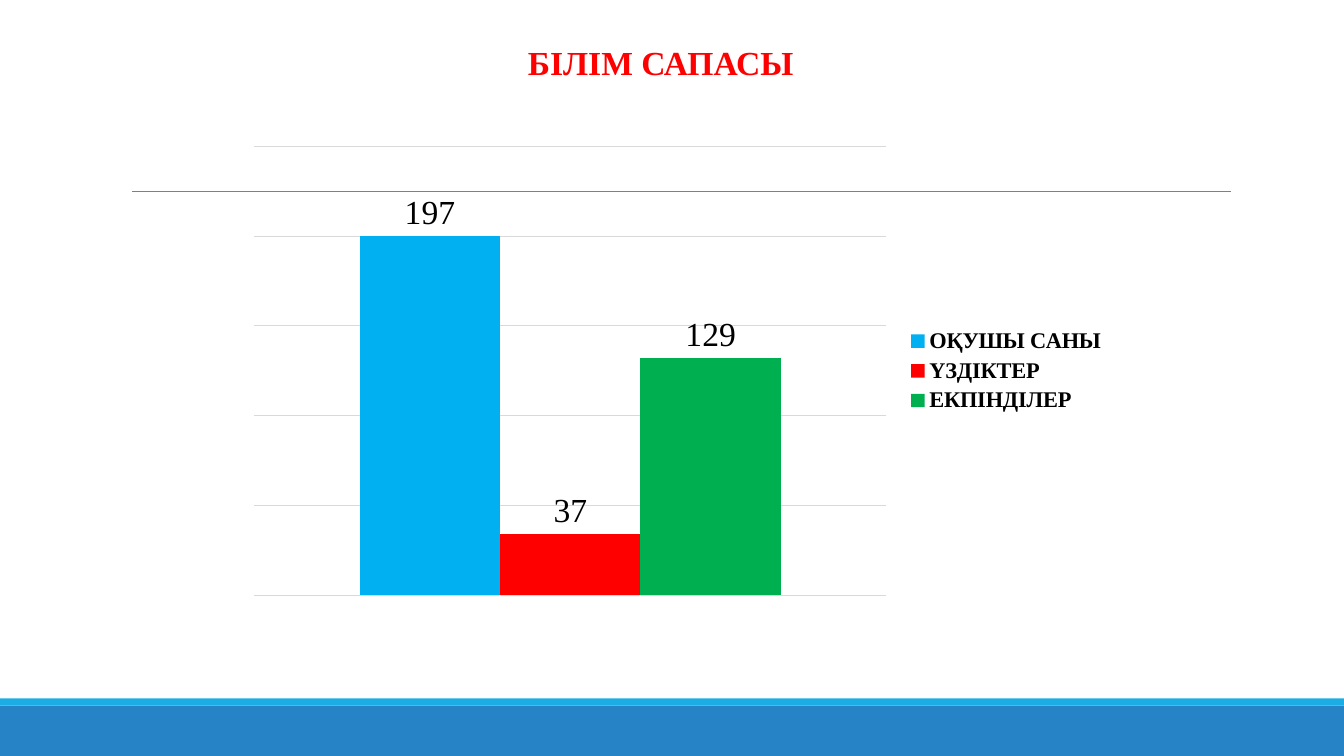
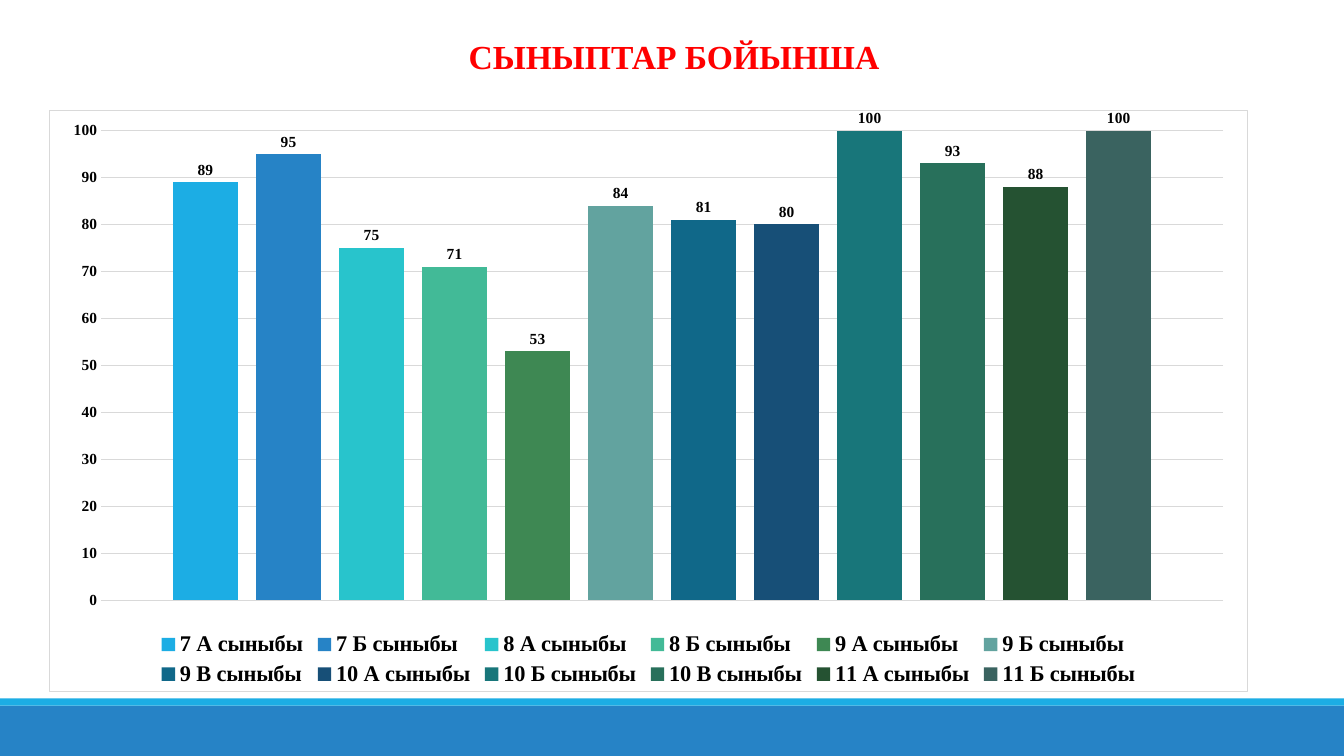
from pptx import Presentation
from pptx import util as u
from pptx.chart.data import CategoryChartData
from pptx.dml.color import RGBColor
from pptx.enum import chart as charts, shapes, text
from pptx.oxml import parse_xml
from pptx.oxml.ns import nsdecls, qn

COLORS = {
    "white": "FFFFFF", "black": "000000", "red": "FF0000", "rule": "808080",
    "grid": "D9D9D9", "band": "2683C6", "stripe": "1CADE4",
}
FONT = "Times New Roman"
WIDTH, HEIGHT = 33.87, 19.05

QUALITY = [
    ("ОҚУШЫ САНЫ", 200, "00B0F0", "197"),
    ("ҮЗДІКТЕР", 34, "FF0000", "37"),
    ("ЕКПІНДІЛЕР", 132, "00B050", "129"),
]
CLASSES = [
    ("7 А сыныбы", 89, "1CADE4"), ("7 Б сыныбы", 95, "2683C6"),
    ("8 А сыныбы", 75, "28C4CC"), ("8 Б сыныбы", 71, "42BA97"),
    ("9 А сыныбы", 53, "3E8853"), ("9 Б сыныбы", 84, "62A39F"),
    ("9 В сыныбы", 81, "106889"), ("10 А сыныбы", 80, "174F77"),
    ("10 Б сыныбы", 100, "18767A"), ("10 В сыныбы", 93, "28705B"),
    ("11 А сыныбы", 88, "255232"), ("11 Б сыныбы", 100, "3A6360"),
]


def set_font(font, size, color="black", bold=True):
    font.name = FONT
    font.size = u.Pt(size)
    font.bold = bold
    font.color.rgb = RGBColor.from_string(COLORS[color])


class Deck:
    def __init__(self):
        self.presentation = Presentation()
        self.presentation.slide_width = u.Cm(WIDTH)
        self.presentation.slide_height = u.Cm(HEIGHT)
        self.slide = None

    def add_slide(self):
        layout = self.presentation.slide_layouts[6]
        self.slide = self.presentation.slides.add_slide(layout)
        self.band(17.78, 1.27, "band")
        self.band(17.6, 0.18, "stripe")
        self.rule(3.33, 31.01, 4.83)

    def band(self, top, height, color):
        shape = self.slide.shapes.add_shape(
            shapes.MSO_SHAPE.RECTANGLE, 0, u.Cm(top), u.Cm(WIDTH), u.Cm(height))
        shape.shadow.inherit = False
        shape.fill.solid()
        shape.fill.fore_color.rgb = RGBColor.from_string(COLORS[color])
        shape.line.fill.background()

    def rule(self, left, right, top):
        connector = self.slide.shapes.add_connector(
            shapes.MSO_CONNECTOR.STRAIGHT, u.Cm(left), u.Cm(top), u.Cm(right), u.Cm(top))
        connector.line.width = u.Pt(0.5)
        connector.line.color.rgb = RGBColor.from_string(COLORS["rule"])
        properties = connector.element.find(qn("p:spPr"))
        properties.append(parse_xml(f"<a:effectLst {nsdecls('a')}/>"))

    def title(self, wording, left, top, width, alignment):
        box = self.slide.shapes.add_textbox(u.Cm(left), u.Cm(top), u.Cm(width), u.Cm(1.27))
        box.text_frame.word_wrap = True
        box.text_frame.text = wording
        paragraph = box.text_frame.paragraphs[0]
        paragraph.alignment = alignment
        set_font(paragraph.runs[0].font, 24, "red")

    def column_chart(self, rows, box, legend_position, gap, overlap, label_size, maximum):
        data = CategoryChartData()
        data.categories = ["1"]
        for name, value, *_ in rows:
            data.add_series(name, [value])
        chart = self.slide.shapes.add_chart(
            charts.XL_CHART_TYPE.COLUMN_CLUSTERED, *map(u.Cm, box), data).chart
        set_font(chart.font, 11)
        chart.has_title = False
        chart.has_legend = True
        chart.legend.position = legend_position
        chart.legend.include_in_layout = False
        set_font(chart.legend.font, 16)
        plot = chart.plots[0]
        plot.vary_by_categories = False
        plot.gap_width = gap
        plot.overlap = overlap
        chart.category_axis.visible = False
        axis = chart.value_axis
        axis.minimum_scale = 0
        axis.maximum_scale = maximum
        axis.major_tick_mark = charts.XL_TICK_MARK.NONE
        axis.format.line.fill.background()
        set_font(axis.tick_labels.font, 11)
        grid = axis.major_gridlines.format.line
        grid.width = u.Pt(0.75)
        grid.color.rgb = RGBColor.from_string(COLORS["grid"])
        for series, (_, _, color, *captions) in zip(plot.series, rows):
            series.format.fill.solid()
            series.format.fill.fore_color.rgb = RGBColor.from_string(color)
            labels = series.data_labels
            labels.show_value = True
            labels.position = charts.XL_LABEL_POSITION.OUTSIDE_END
            set_font(labels.font, label_size)
            for index, caption in enumerate(captions):
                label = series.points[index].data_label
                label.text_frame.text = caption
                set_font(label.text_frame.paragraphs[0].runs[0].font, label_size, bold=False)
                label.position = charts.XL_LABEL_POSITION.OUTSIDE_END
        return chart

    def chart_area(self, chart, fill=None, border=None):
        def paint(color):
            if color is None:
                return "<a:noFill/>"
            return f'<a:solidFill><a:srgbClr val="{COLORS[color]}"/></a:solidFill>'

        chart.element.find(qn("c:chart")).addnext(parse_xml(
            f'<c:spPr {nsdecls("c", "a")}>{paint(fill)}'
            f'<a:ln w="{u.Pt(0.75)}">{paint(border)}</a:ln></c:spPr>'))


def main():
    deck = Deck()

    deck.add_slide()
    deck.title("БІЛІМ САПАСЫ", 8.18, 0.94, 16.94, text.PP_ALIGN.CENTER)
    quality = deck.column_chart(
        QUALITY, (5.97, 3.45, 22.17, 11.79), charts.XL_LEGEND_POSITION.RIGHT,
        gap=150, overlap=0, label_size=24, maximum=250)
    quality.value_axis.visible = False
    deck.chart_area(quality)

    deck.add_slide()
    deck.title("СЫНЫПТАР БОЙЫНША", 11.56, 0.79, 14.6, text.PP_ALIGN.LEFT)
    classes = deck.column_chart(
        CLASSES, (1.24, 2.77, 30.2, 14.66), charts.XL_LEGEND_POSITION.BOTTOM,
        gap=219, overlap=-27, label_size=11, maximum=100)
    deck.chart_area(classes, "white", "grid")

    deck.presentation.save("out.pptx")


if __name__ == "__main__":
    main()
